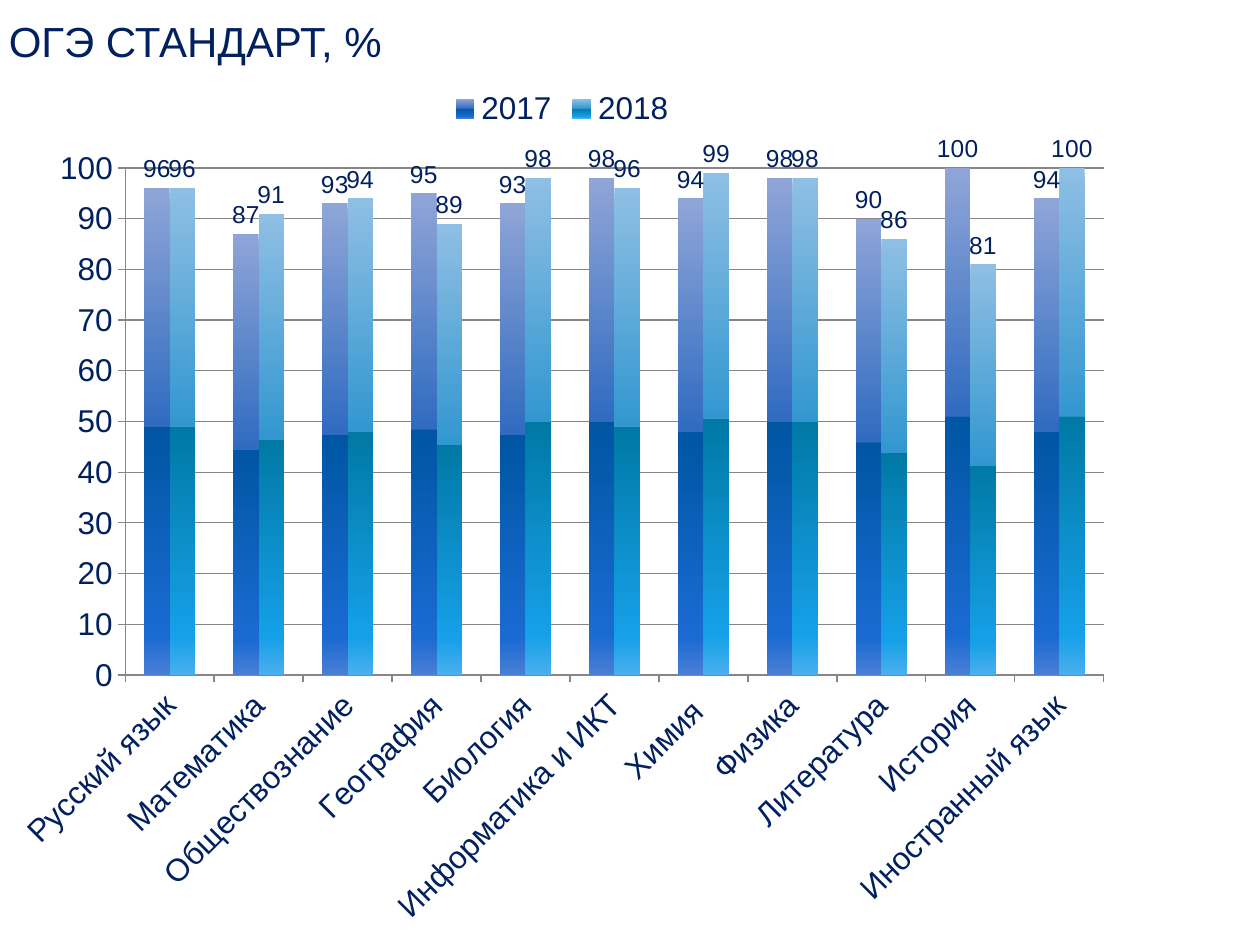
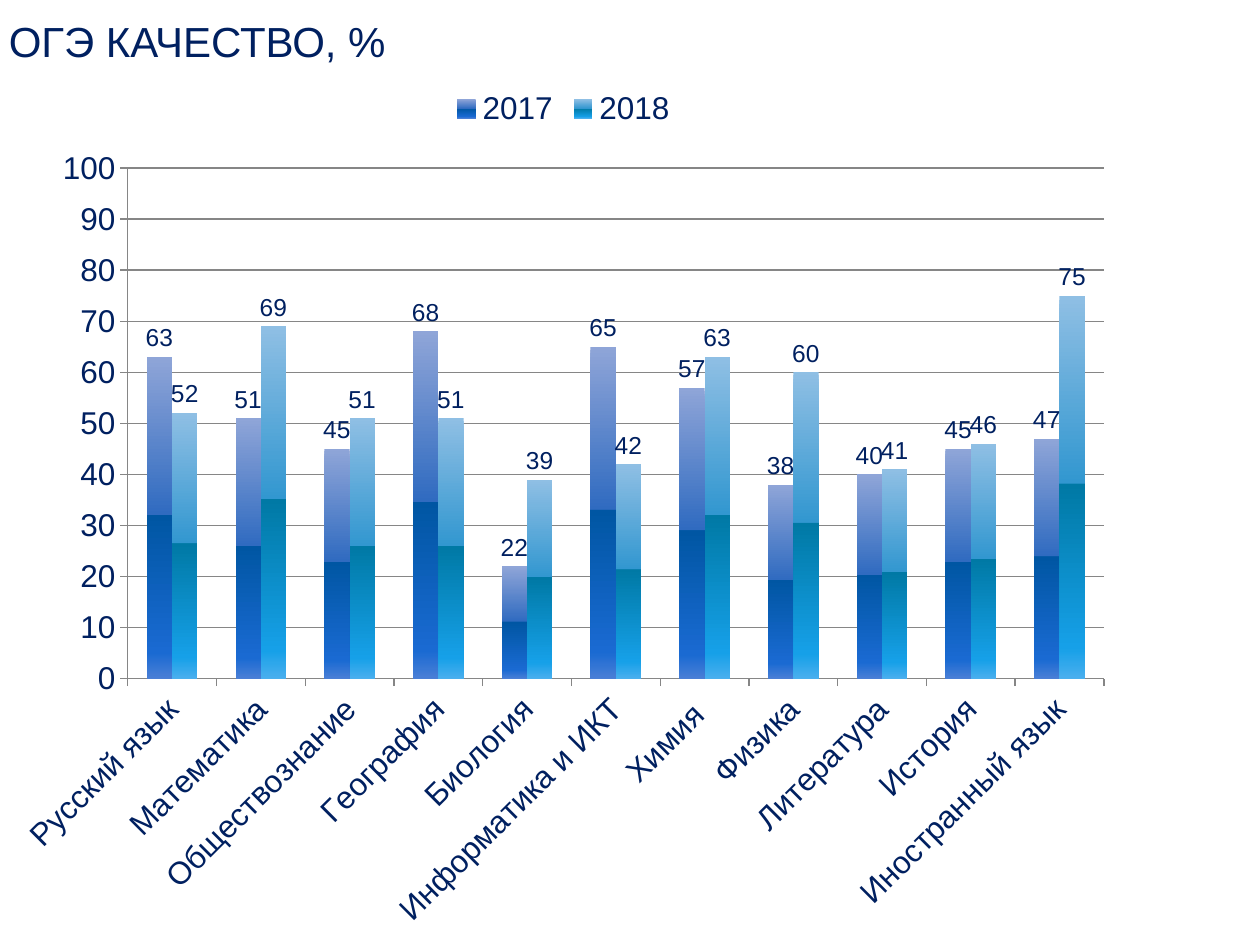
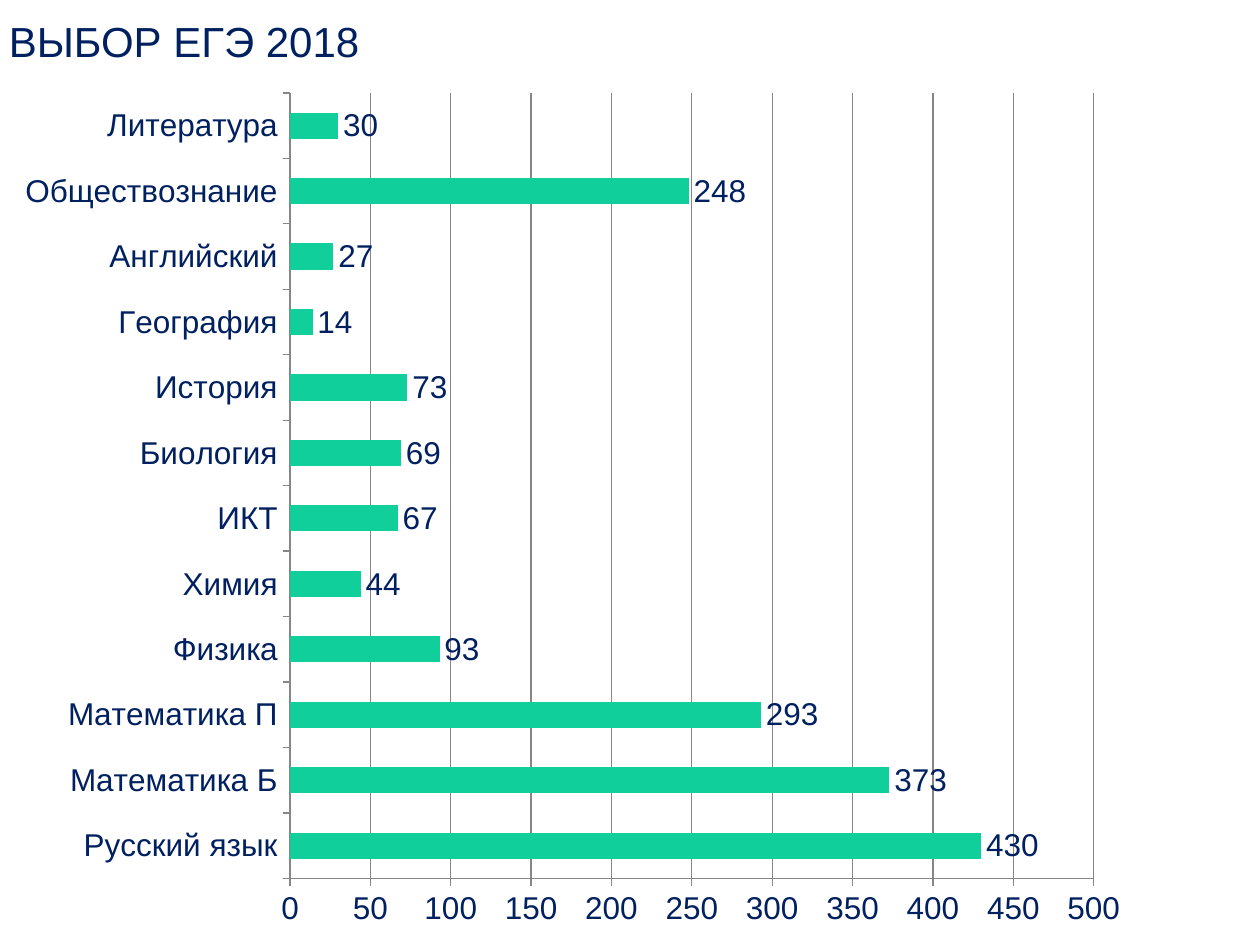
import dataclasses

import lxml.etree
import pptx
import pptx.chart.data
import pptx.dml.color
import pptx.enum.chart
import pptx.enum.text
import pptx.oxml.ns
import pptx.util

Inches = pptx.util.Inches
Pt = pptx.util.Pt
qn = pptx.oxml.ns.qn


@dataclasses.dataclass(frozen=True)
class Theme:
    font: str = "Arial"
    text: str = "002060"
    background: str = "FFFFFF"
    grid: str = "868686"
    choice: str = "10CF9B"
    blue: tuple = ("8FA5D8", "306BC0", "0056A3", "1A6AD2", "4A7FD6")
    cyan: tuple = ("8FBFE4", "3297D0", "0079A5", "16A0E8", "4AAFEE")
    stops: tuple = (0, 49, 49.1, 92, 100)
    title_size: int = 24
    axis_size: int = 18
    small_size: int = 14


THEME = Theme()

OGE_SUBJECTS = [
    "Русский язык", "Математика", "Обществознание", "География", "Биология",
    "Информатика и ИКТ", "Химия ", "Физика", "Литература", "История",
    "Иностранный язык",
]
STANDARD = {
    "2017": [96, 87, 93, 95, 93, 98, 94, 98, 90, 100, 94],
    "2018": [96, 91, 94, 89, 98, 96, 99, 98, 86, 81, 100],
}
QUALITY = {
    "2017": [63, 51, 45, 68, 22, 65, 57, 38, 40, 45, 47],
    "2018": [52, 69, 51, 51, 39, 42, 63, 60, 41, 46, 75],
}
EGE_CHOICE = {
    "Русский язык": 430, "Математика Б": 373, "Математика П": 293,
    "Физика": 93, "Химия": 44, "ИКТ": 67, "Биология": 69, "История": 73,
    "География": 14, "Английский": 27, "Обществознание": 248, "Литература": 30,
}


def rgb(color):
    return pptx.dml.color.RGBColor.from_string(color)


def style_font(font, size):
    font.name = THEME.font
    font.size = Pt(size)
    font.bold = False
    font.color.rgb = rgb(THEME.text)


def style_line(line):
    line.color.rgb = rgb(THEME.grid)
    line.width = Pt(0.75)


def add_slide(prs, title):
    s = prs.slides.add_slide(prs.slide_layouts[6])
    s.background.fill.solid()
    s.background.fill.fore_color.rgb = rgb(THEME.background)
    sp = s.shapes.add_textbox(Inches(0.02), Inches(0.07), Inches(10), Inches(0.45))
    tf = sp.text_frame
    tf.word_wrap = True
    tf.vertical_anchor = pptx.enum.text.MSO_ANCHOR.BOTTOM
    tf.margin_left = tf.margin_right = Inches(0.05)
    tf.margin_top = tf.margin_bottom = 0
    r = tf.paragraphs[0].add_run()
    r.text = title
    style_font(r.font, THEME.title_size)
    return s


def fill_gradient(fill, colors):
    fill.gradient()
    fill.gradient_angle = 270
    gs_lst = fill.gradient_stops[0]._gs.getparent()
    for gs in list(gs_lst):
        gs_lst.remove(gs)
    for stop, color in zip(THEME.stops, colors):
        gs = lxml.etree.SubElement(gs_lst, qn("a:gs"), pos=str(round(stop * 1000)))
        lxml.etree.SubElement(gs, qn("a:srgbClr"), val=color)


def fill_series(series, paint):
    fill = series.format.fill
    if isinstance(paint, tuple):
        fill_gradient(fill, paint)
    else:
        fill.solid()
        fill.fore_color.rgb = rgb(paint)
    series.format.line.fill.background()
    series.invert_if_negative = False


def style_axis(axis):
    axis.major_tick_mark = pptx.enum.chart.XL_TICK_MARK.OUTSIDE
    axis.minor_tick_mark = pptx.enum.chart.XL_TICK_MARK.NONE
    style_font(axis.tick_labels.font, THEME.axis_size)
    style_line(axis.format.line)


def add_bars(s, kind, box, categories, values, paints, top, step, label_size):
    data = pptx.chart.data.CategoryChartData()
    data.categories = categories
    for name, numbers in values.items():
        data.add_series(name, numbers)
    chart = s.shapes.add_chart(kind, *map(Inches, box), data).chart
    chart.has_title = False
    chart.has_legend = False
    style_font(chart.font, THEME.axis_size)
    style_axis(chart.category_axis)
    style_axis(chart.value_axis)
    chart.value_axis.minimum_scale = 0
    chart.value_axis.maximum_scale = top
    chart.value_axis.major_unit = step
    chart.value_axis.has_major_gridlines = True
    style_line(chart.value_axis.major_gridlines.format.line)
    plot = chart.plots[0]
    plot.gap_width = 150
    plot.vary_by_categories = False
    for series, paint in zip(plot.series, paints):
        fill_series(series, paint)
        labels = series.data_labels
        labels.show_value = True
        labels.position = pptx.enum.chart.XL_LABEL_POSITION.OUTSIDE_END
        style_font(labels.font, label_size)
    return chart


def add_year_columns(s, box, values):
    chart = add_bars(
        s, pptx.enum.chart.XL_CHART_TYPE.COLUMN_CLUSTERED, box, OGE_SUBJECTS,
        values, (THEME.blue, THEME.cyan), 100, 10, THEME.small_size)
    chart.has_legend = True
    chart.legend.position = pptx.enum.chart.XL_LEGEND_POSITION.TOP
    chart.legend.include_in_layout = False
    style_font(chart.legend.font, THEME.axis_size)
    body = chart.category_axis._element.find(qn("c:txPr")).find(qn("a:bodyPr"))
    body.set("rot", "-2700000")
    body.set("vert", "horz")


def add_choice_bars(s, box):
    add_bars(
        s, pptx.enum.chart.XL_CHART_TYPE.BAR_CLUSTERED, box, list(EGE_CHOICE),
        {"Series 1": list(EGE_CHOICE.values())}, (THEME.choice,), 500, 50,
        THEME.axis_size)


def main():
    prs = pptx.Presentation()
    prs.slide_width = Inches(10)
    prs.slide_height = Inches(7.5)
    add_year_columns(add_slide(prs, "ОГЭ СТАНДАРТ, %"), (-0.02, 0.6, 8.96, 6.87), STANDARD)
    add_year_columns(add_slide(prs, "ОГЭ КАЧЕСТВО, %"), (0, 0.6, 8.94, 6.9), QUALITY)
    add_choice_bars(add_slide(prs, "ВЫБОР ЕГЭ 2018"), (0.02, 0.6, 9.05, 6.89))
    prs.save("out.pptx")


if __name__ == "__main__":
    main()
